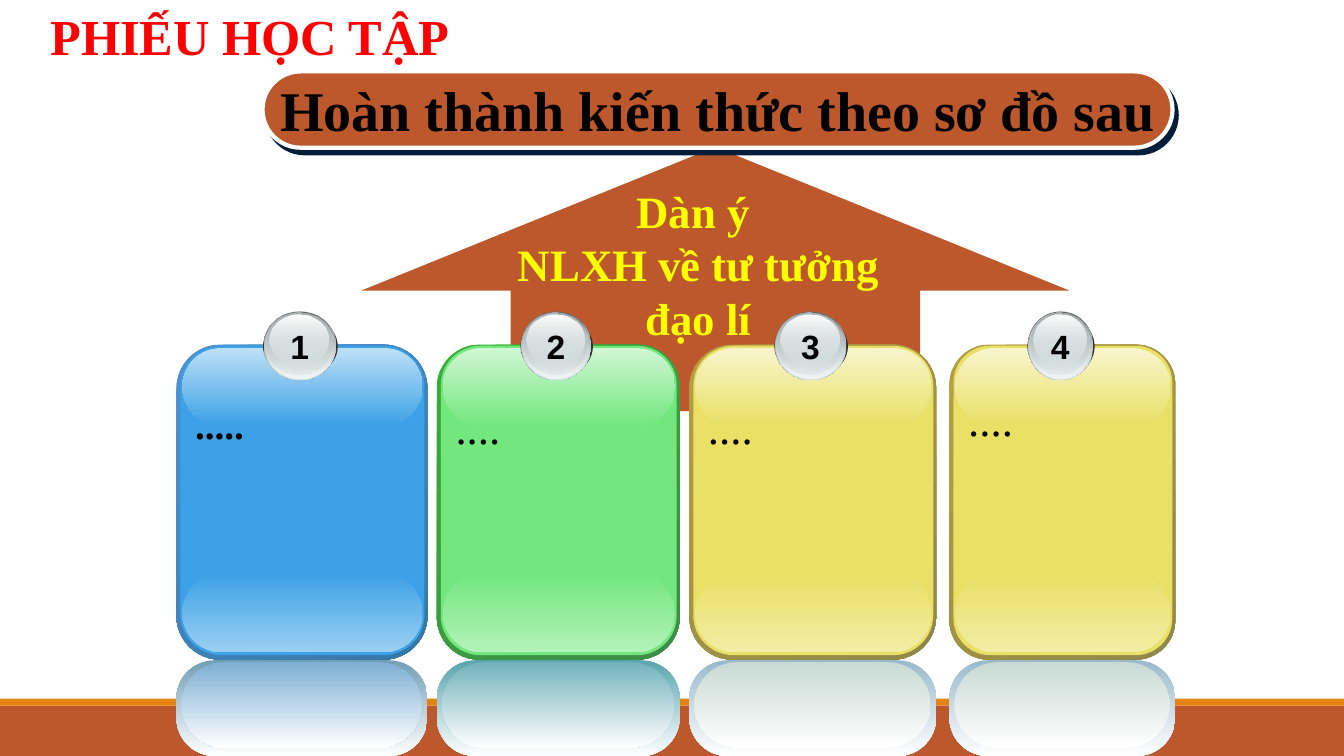
from dataclasses import dataclass

from lxml import etree
from pptx import Presentation
from pptx.dml.color import RGBColor
from pptx.enum import shapes, text
from pptx.oxml import ns
from pptx.util import Pt


@dataclass(frozen=True)
class Theme:
    serif: str = "Times New Roman"
    sans: str = "Arial"
    rust: str = "BD582C"
    orange: str = "E48312"
    white: str = "FFFFFF"
    black: str = "000000"
    red: str = "FF0000"
    yellow: str = "FFFF00"
    navy: str = "001D3A"
    banner_size: int = 40
    title_size: int = 36
    body_size: int = 32
    small_size: int = 28
    badge_size: int = 24


theme = Theme()
ROUND = shapes.MSO_SHAPE.ROUNDED_RECTANGLE
OVAL = shapes.MSO_SHAPE.OVAL
ALIGN = text.PP_ALIGN


def add_layer(parent, kind, place, fill, adjustments=(), angle=90):
    """Add a borderless shape; fill is one colour or two (colour, opacity %) stops."""
    layer = parent.add_shape(kind, *[Pt(length) for length in place])
    layer.shadow.inherit = False
    layer.line.fill.background()
    for index, value in enumerate(adjustments):
        layer.adjustments[index] = value
    if isinstance(fill, str):
        layer.fill.solid()
        layer.fill.fore_color.rgb = RGBColor.from_string(fill)
        return layer
    layer.fill.gradient()
    layer.fill.gradient_angle = 360 - angle
    for stop, (colour, _) in zip(layer.fill.gradient_stops, fill):
        stop.color.rgb = RGBColor.from_string(colour)
    colours = layer.element.spPr.findall(".//" + ns.qn("a:srgbClr"))
    for node, (_, opacity) in zip(colours, fill):
        if opacity < 100:
            etree.SubElement(node, ns.qn("a:alpha"), val=str(opacity * 1000))
    return layer


def write(box, lines, size, colour, align, font=theme.serif, bold=True, wrap=True,
          anchor=text.MSO_ANCHOR.TOP):
    frame = box.text_frame
    frame.word_wrap = wrap
    frame.auto_size = text.MSO_AUTO_SIZE.NONE
    frame.vertical_anchor = anchor
    for index, line in enumerate(lines):
        para = frame.add_paragraph() if index else frame.paragraphs[0]
        para.alignment = align
        span = para.add_run()
        span.text = line
        span.font.name = font
        span.font.size = Pt(size)
        span.font.bold = bold
        span.font.color.rgb = RGBColor.from_string(colour)


deck = Presentation()
deck.slide_width, deck.slide_height = Pt(960), Pt(540)
page = deck.slides.add_slide(deck.slide_layouts[5])

# Footer bands and arrow
add_layer(page.shapes, shapes.MSO_SHAPE.RECTANGLE, (0, 504, 960, 36), theme.rust)
add_layer(page.shapes, shapes.MSO_SHAPE.RECTANGLE, (0, 499, 960, 5), theme.orange)
add_layer(page.shapes, shapes.MSO_SHAPE.UP_ARROW, (258, 105, 506, 188.6),
          theme.rust, (0.578, 0.544))

# Title
title = page.shapes.title
title.left, title.top, title.width, title.height = Pt(28.8), Pt(0), Pt(468), Pt(51)
write(title, ["PHIẾU HỌC TẬP"], theme.title_size, theme.red, ALIGN.LEFT)

# Banner with a hard offset shadow
banner = add_layer(page.shapes, ROUND, (187.5, 51, 650, 54.5), theme.rust, (0.5,))
banner.line.color.rgb = RGBColor.from_string(theme.white)
banner.line.width = Pt(3)
effects = banner.element.spPr.find(ns.qn("a:effectLst"))
shadow = etree.SubElement(effects, ns.qn("a:outerShdw"), dist=str(Pt(5)),
                          dir=str(53 * 60000), algn="ctr", rotWithShape="0")
etree.SubElement(shadow, ns.qn("a:srgbClr"), val=theme.navy)
write(banner, ["Hoàn thành kiến thức theo sơ đồ sau"], theme.banner_size, theme.black,
      ALIGN.CENTER, wrap=False, anchor=text.MSO_ANCHOR.MIDDLE)

topic = page.shapes.add_textbox(Pt(347.8), Pt(127.4), Pt(302.4), Pt(124))
write(topic, ["Dàn ý ", "NLXH về tư tưởng đạo lí"], theme.body_size, theme.yellow,
      ALIGN.CENTER)

# Cards: rim gradient, face, lower gloss, upper gloss, reflection rim, reflection face
blue = ("4E91D4", "3477A4", "3CA1E6", "9BCFF2", "BEE0F7", "729EB4", "7DAFD4")
green = ("34B034", "3F8B4A", "73E77E", "B3F2B9", "D0F7D4", "58A4AE", "72B2BB")
gold = ("B59F43", "8F8849", "E9E065", "F2EDA6", "F8F5CC", "99BACC", "C8DAD4")

# Left, width, colours, text, text top, text size, bold
cards = [
    (126, 179.3, blue, ".....", 282.2, theme.small_size, True),
    (312, 173.5, green, "....", 282.2, theme.body_size, False),
    (492.3, 176.4, gold, "....", 282.2, theme.body_size, False),
    (678.2, 161.3, gold, "....", 276.5, theme.body_size, False),
]

# Left and width as shares of the card width, then top, height, fill
badge_layers = [
    (0.345, 0.298, 225.4, 44, "333333"),
    (0.348, 0.288, 222.5, 49, (("636869", 100), ("D6E1E2", 100))),
    (0.35, 0.282, 222.8, 47.5, (("D6E1E2", 0), ("F1F5F5", 100))),
    (0.355, 0.267, 223.2, 44.6, (("AAB2B3", 100), ("D6E1E2", 48))),
    (0.37, 0.237, 224.6, 36, (("FFFFFF", 100), ("D6E1E2", 38))),
]

for number, (left, width, colours, words, text_top, size, bold) in enumerate(cards, 1):
    rim, rim_end, face, low, high, mirror_rim, mirror = colours
    card = page.shapes.add_group_shape().shapes

    # Inset, width lost, top, height, fill, corner, angle
    for inset, loss, top, height, fill, corner, angle in [
        (0, 0, 246.2, 225, ((rim, 100), (rim_end, 100)), 0.175, 45),
        (2.9, 5, 247, 221, face, 0.167, 90),
        (4.3, 7.7, 409.7, 56.2, ((face, 100), (low, 100)), 0.5, 90),
        (4.3, 7.7, 248.6, 55.4, ((high, 100), (face, 100)), 0.5, 90),
        (0, 0, 471.6, 68.4, ((mirror_rim, 100), (theme.white, 100)), 0.404, 90),
        (3.6, 7.7, 473, 61.2, ((mirror, 100), (theme.white, 100)), 0.5, 90),
    ]:
        add_layer(card, ROUND, (left + inset, top, width - loss, height), fill,
                  (corner,), angle)

    for start, share, top, height, fill in badge_layers:
        add_layer(card, OVAL, (left + start * width, top, share * width, height), fill)

    label = card.add_textbox(Pt(left + 0.491 * width - 14), Pt(229.2), Pt(28), Pt(36))
    write(label, [str(number)], theme.badge_size, theme.black, ALIGN.CENTER,
          font=theme.sans, wrap=False)

    body = card.add_textbox(Pt(left + 6.3), Pt(text_top), Pt(width - 8.6), Pt(46))
    write(body, [words], size, theme.black, ALIGN.JUSTIFY, bold=bold)

deck.save("out.pptx")
